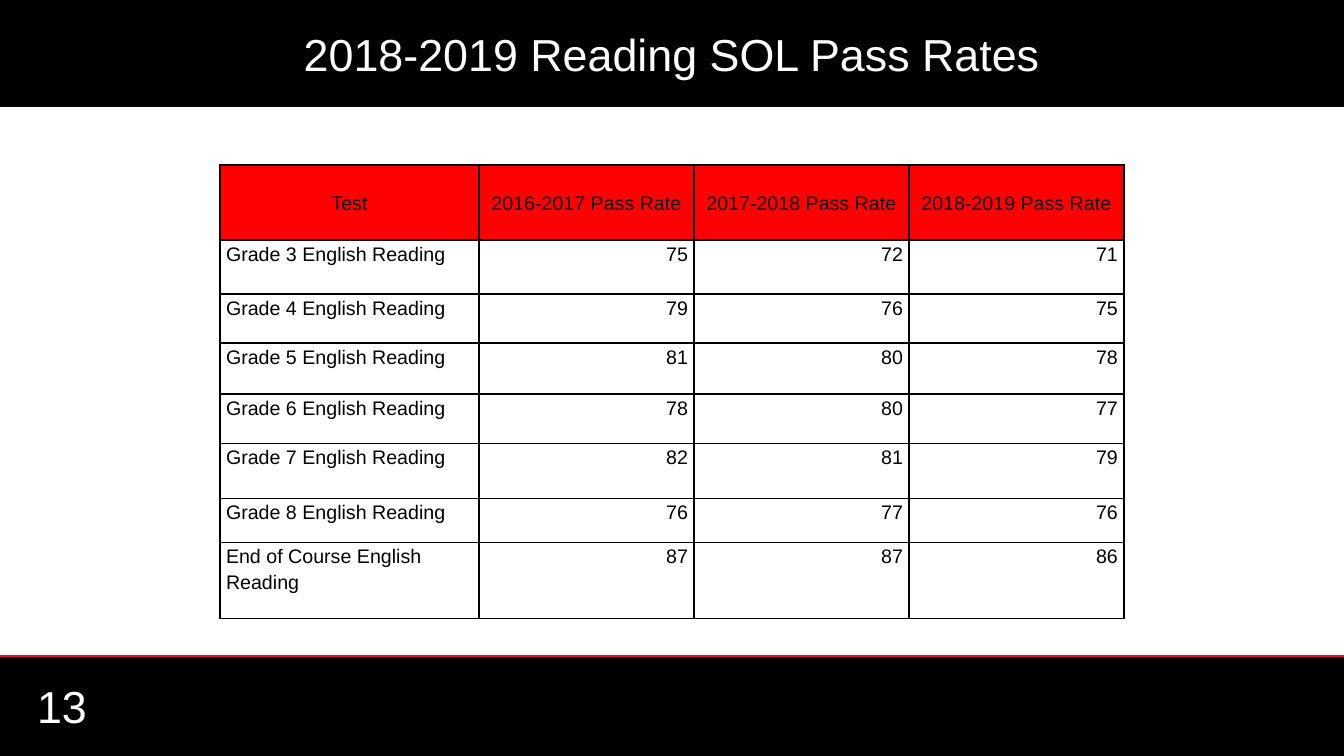
import pptx
import pptx.dml.color
import pptx.enum.shapes
import pptx.enum.text
import pptx.oxml
import pptx.oxml.ns
import pptx.util
import lxml.etree

TITLE = "2018-2019 Reading SOL Pass Rates"
PAGE_NUMBER = "13"
PASS_RATES = [
    ("Test", "2016-2017 Pass Rate", "2017-2018 Pass Rate", "2018-2019 Pass Rate"),
    ("Grade 3 English Reading", 75, 72, 71),
    ("Grade 4 English Reading", 79, 76, 75),
    ("Grade 5 English Reading", 81, 80, 78),
    ("Grade 6 English Reading", 78, 80, 77),
    ("Grade 7 English Reading", 82, 81, 79),
    ("Grade 8 English Reading", 76, 77, 76),
    ("End of Course English Reading", 87, 87, 86),
]
COL_WIDTHS = [259, 215, 215, 215]
ROW_HEIGHTS = [75, 54, 49, 51, 50, 55, 44, 76]
TABLE_LEFT, TABLE_TOP = 220, 165

SLIDE_W, SLIDE_H = 1344, 756
BAR_LEFT, BAR_W = -38, 1420
TITLE_H = 107
FOOTER_TOP, FOOTER_H = 656, 101

FONT = "Arial"
BLACK, WHITE, RED, CRIMSON = "000000", "FFFFFF", "FF0000", "E20D38"
ALIGN = pptx.enum.text.PP_ALIGN
MIDDLE = pptx.enum.text.MSO_ANCHOR.MIDDLE


def px(n):
    return pptx.util.Emu(round(n * 914400 / 100.8))


def rgb(color):
    return pptx.dml.color.RGBColor.from_string(color)


def write(tf, text, size, color, align):
    tf.text = str(text)
    tf.word_wrap = True
    p = tf.paragraphs[0]
    p.alignment = align
    font = p.runs[0].font
    font.name, font.size = FONT, pptx.util.Pt(size)
    font.color.rgb = rgb(color)
    return p


def add_bar(slide, top, height):
    s = slide.shapes.add_shape(pptx.enum.shapes.MSO_SHAPE.RECTANGLE,
                               px(BAR_LEFT), px(top), px(BAR_W), px(height))
    s.shadow.inherit = False
    s.fill.solid()
    s.fill.fore_color.rgb = rgb(BLACK)
    s.line.fill.background()
    return s


def add_borders(cell):
    """Draw a 1 pt line on all four sides; lines must come before the cell fill."""
    tc_pr = cell._tc.get_or_add_tcPr()
    for i, side in enumerate("LRTB"):
        tc_pr.insert(i, pptx.oxml.parse_xml(
            f'<a:ln{side} {pptx.oxml.ns.nsdecls("a")} w="12700"><a:solidFill>'
            f'<a:srgbClr val="{BLACK}"/></a:solidFill></a:ln{side}>'))


def add_footer(slide):
    add_bar(slide, FOOTER_TOP, FOOTER_H)
    line = slide.shapes.add_connector(
        pptx.enum.shapes.MSO_CONNECTOR.STRAIGHT,
        px(BAR_LEFT), px(FOOTER_TOP), px(BAR_LEFT + BAR_W), px(FOOTER_TOP))
    line.line.color.rgb = rgb(CRIMSON)
    line.line.width = pptx.util.Pt(2)
    lxml.etree.SubElement(line._element.spPr, pptx.oxml.ns.qn("a:effectLst"))

    tf = slide.shapes.add_textbox(px(24), px(686), px(313), px(40)).text_frame
    tf.margin_left = tf.margin_right = px(13)
    tf.margin_top = tf.margin_bottom = px(7)
    tf.vertical_anchor = MIDDLE
    write(tf, PAGE_NUMBER, 32, WHITE, ALIGN.LEFT)


def add_rates_table(slide):
    table = slide.shapes.add_table(
        len(PASS_RATES), len(COL_WIDTHS), px(TABLE_LEFT), px(TABLE_TOP),
        px(sum(COL_WIDTHS)), px(sum(ROW_HEIGHTS))).table
    table.first_row = table.horz_banding = False
    for col, width in zip(table.columns, COL_WIDTHS):
        col.width = px(width)
    for r, (row, height) in enumerate(zip(table.rows, ROW_HEIGHTS)):
        row.height = px(height)
        for c, cell in enumerate(row.cells):
            cell.margin_left = cell.margin_right = px(6)
            cell.margin_top = cell.margin_bottom = 0
            if r == 0:
                align = ALIGN.CENTER
                cell.vertical_anchor = MIDDLE
                cell.fill.solid()
                cell.fill.fore_color.rgb = rgb(RED)
            else:
                align = ALIGN.RIGHT if c else ALIGN.LEFT
                cell.fill.background()
            p = write(cell.text_frame, PASS_RATES[r][c], 14, BLACK, align)
            p.line_spacing = 1.15
            add_borders(cell)


def add_title(slide):
    tf = add_bar(slide, 0, TITLE_H).text_frame
    tf.margin_left = tf.margin_right = px(50)
    tf.margin_top = tf.margin_bottom = 0
    tf.vertical_anchor = MIDDLE
    write(tf, TITLE, 32, WHITE, ALIGN.CENTER)


def main():
    prs = pptx.Presentation()
    prs.slide_width, prs.slide_height = px(SLIDE_W), px(SLIDE_H)
    slide = prs.slides.add_slide(prs.slide_layouts[6])
    add_footer(slide)
    add_rates_table(slide)
    add_title(slide)
    prs.save("out.pptx")


if __name__ == "__main__":
    main()
